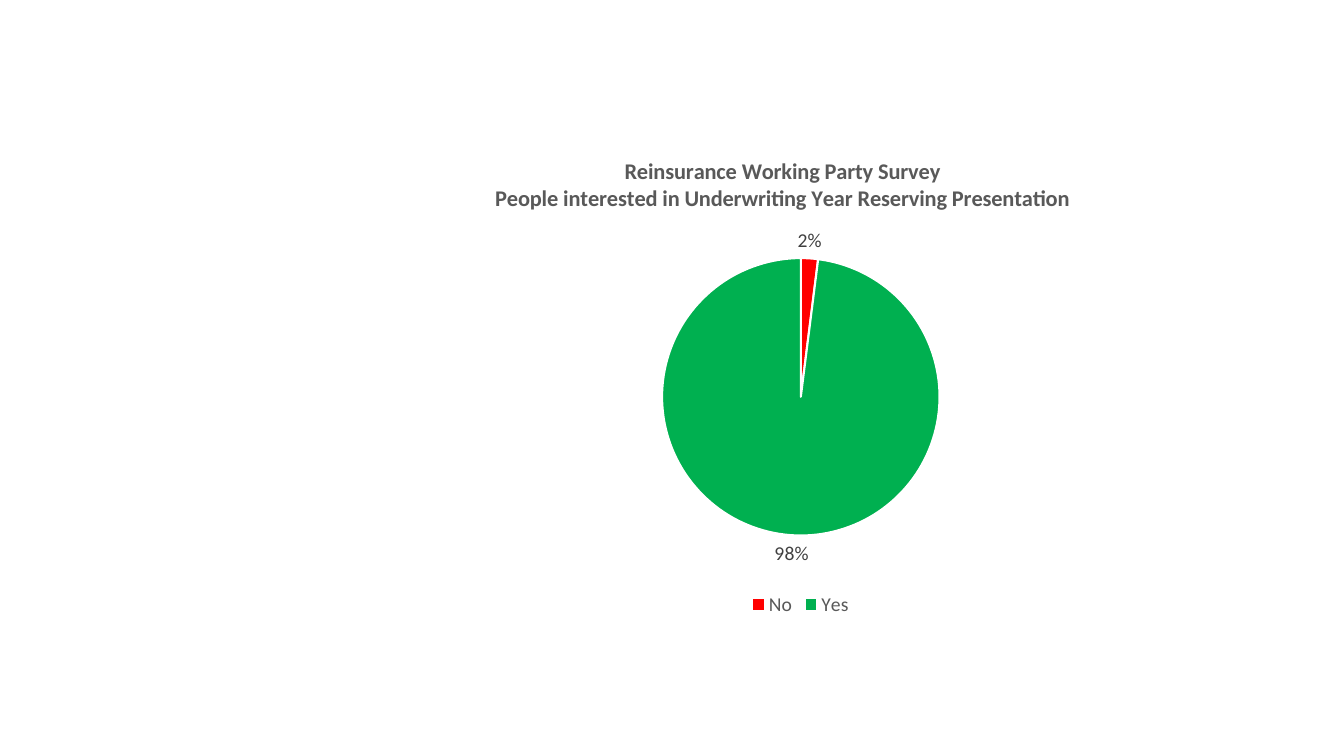
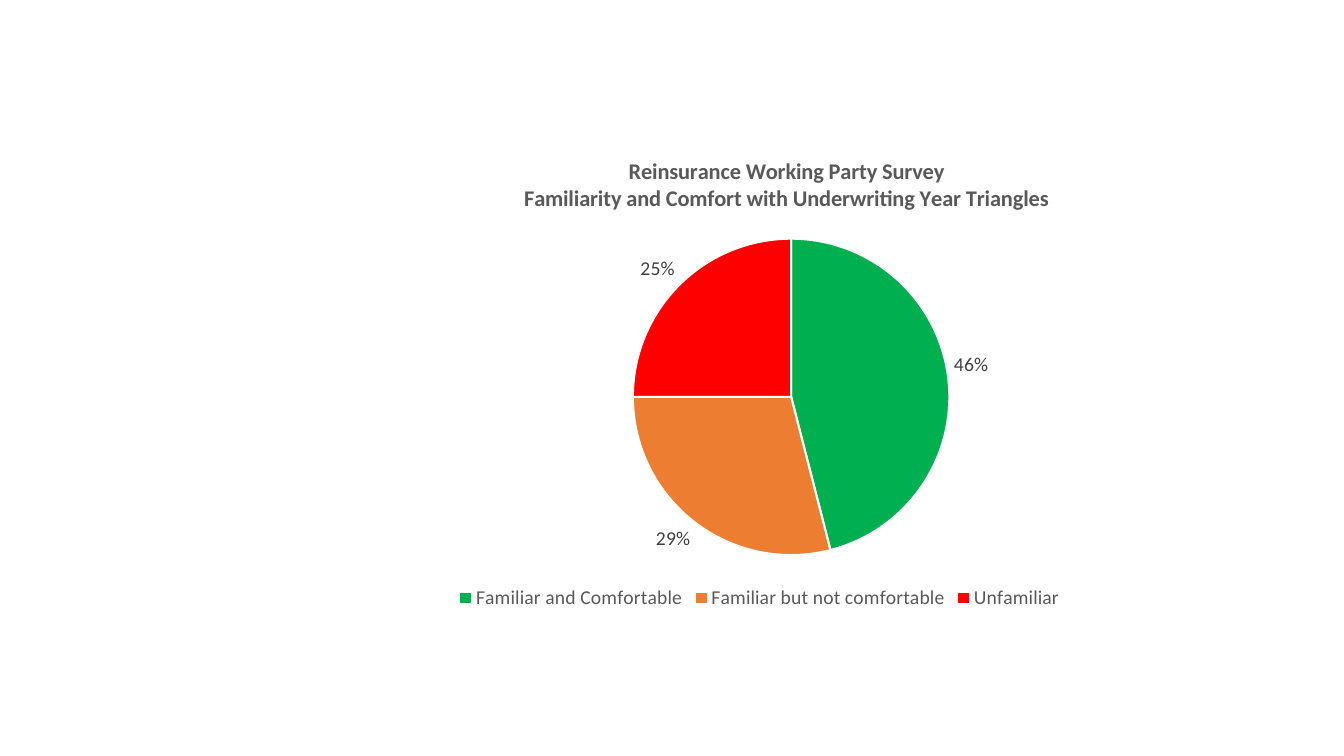
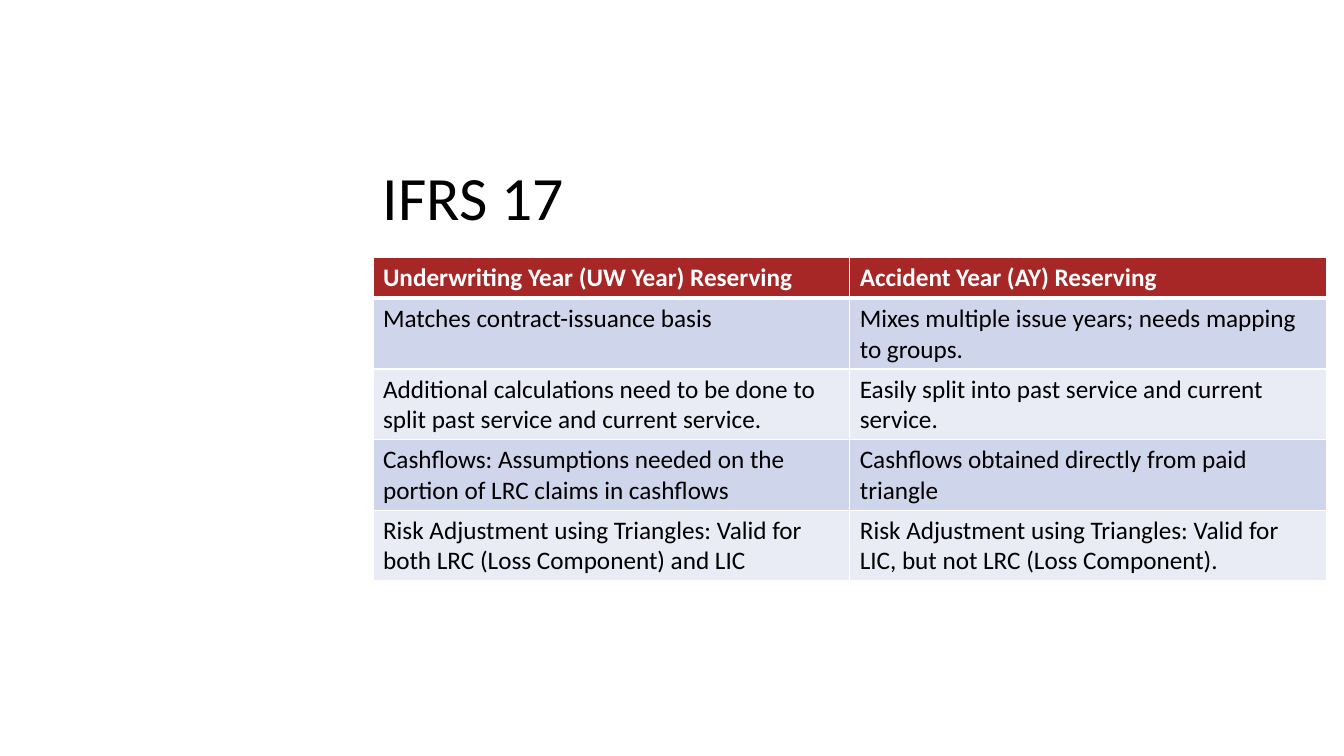
from dataclasses import dataclass

from lxml import etree
from pptx import Presentation
from pptx.chart.data import CategoryChartData
from pptx.dml.color import RGBColor
from pptx.enum.chart import XL_CHART_TYPE, XL_LABEL_POSITION, XL_LEGEND_POSITION
from pptx.enum.text import MSO_ANCHOR, PP_ALIGN
from pptx.oxml.ns import qn
from pptx.util import Inches, Pt

PIE = XL_CHART_TYPE.PIE
OUTSIDE = XL_LABEL_POSITION.OUTSIDE_END
BOTTOM = XL_LEGEND_POSITION.BOTTOM
MIDDLE = MSO_ANCHOR.MIDDLE
CENTER = PP_ALIGN.CENTER


@dataclass(frozen=True)
class Theme:
    font: str = "Calibri"
    text: str = "000000"
    white: str = "FFFFFF"
    chart_text: str = "595959"
    label: str = "404040"
    green: str = "00B050"
    orange: str = "ED7D31"
    red: str = "FF0000"
    header: str = "A72727"
    bands: tuple = ("CFD5EA", "E9EBF5")
    title_size: int = 44
    table_size: int = 18
    chart_title_size: int = 16
    chart_size: int = 14


THEME = Theme()


class SurveyDeck:
    """Builds slides on a grid of 40 columns and 30 rows in one theme."""

    COLUMNS, ROWS = 40, 30
    CHART_AREA = (9.48, 5.32, 28.71, 19.32)

    def __init__(self, theme):
        self.theme = theme
        self.deck = Presentation()
        self.deck.slide_width = Inches(13.33)
        self.deck.slide_height = Inches(7.5)
        self.page = None

    def add_page(self):
        self.page = self.deck.slides.add_slide(self.deck.slide_layouts[6])

    def place(self, left, top, width, height):
        column = self.deck.slide_width / self.COLUMNS
        row = self.deck.slide_height / self.ROWS
        return [round(n * unit) for n, unit in
                zip((left, top, width, height), (column, row, column, row))]

    def style(self, font, size, color, bold=False):
        font.name = self.theme.font
        font.size = Pt(size)
        font.bold = bold
        font.color.rgb = RGBColor.from_string(color)

    def add_span(self, para, text, size, color, bold=False):
        span = para.add_run()
        span.text = text
        self.style(span.font, size, color, bold)

    def title(self, text, area):
        box = self.page.shapes.add_textbox(*self.place(*area))
        frame = box.text_frame
        frame.word_wrap = True
        frame.vertical_anchor = MIDDLE
        para = frame.paragraphs[0]
        para.line_spacing = 0.9
        self.add_span(para, text, self.theme.title_size, self.theme.text)

    def arrange(self, part, **shares):
        layout = part.find(qn("c:layout"))
        if layout is None:
            layout = etree.Element(qn("c:layout"))
            overlay = part.find(qn("c:overlay"))
            if overlay is None:
                part.insert(0, layout)
            else:
                overlay.addprevious(layout)
        manual = etree.SubElement(layout, qn("c:manualLayout"))
        settings = {"xMode": "edge", "yMode": "edge", **shares}
        if "w" in shares:
            settings = {"layoutTarget": "inner", **settings}
        for name, value in settings.items():
            etree.SubElement(manual, qn(f"c:{name}")).set("val", str(value))

    def pie(self, title_lines, slices, title_left, center, diameter, legend_at=None):
        theme = self.theme
        data = CategoryChartData(number_format="0%")
        data.categories = [name for name, _, _ in slices]
        data.add_series("Series 1", [value for _, value, _ in slices])
        area = self.place(*self.CHART_AREA)
        chart = self.page.shapes.add_chart(PIE, *area, data).chart
        self.style(chart.font, theme.chart_size, theme.text)

        chart.has_title = True
        frame = chart.chart_title.text_frame
        for index, line in enumerate(title_lines):
            para = frame.add_paragraph() if index else frame.paragraphs[0]
            para.alignment = CENTER
            self.add_span(para, line, theme.chart_title_size, theme.chart_text, True)
        self.arrange(chart.chart_title._element, x=title_left, y=0.04)

        chart.has_legend = True
        legend = chart.legend
        legend.position = BOTTOM
        legend.include_in_layout = False
        self.style(legend.font, theme.chart_size, theme.chart_text)
        if legend_at:
            self.arrange(legend._element, x=legend_at[0], y=legend_at[1])

        plot = chart.plots[0]
        plot.vary_by_categories = True
        for index, (_, _, color) in enumerate(slices):
            wedge = plot.series[0].points[index].format
            wedge.fill.solid()
            wedge.fill.fore_color.rgb = RGBColor.from_string(color)
            wedge.line.width = Pt(1.5)
            wedge.line.color.rgb = RGBColor.from_string(theme.white)
        labels = plot.series[0].data_labels
        labels.show_value = True
        labels.position = OUTSIDE
        labels.number_format = "0%"
        labels.number_format_is_linked = False
        self.style(labels.font, theme.chart_size, theme.label)

        breadth = diameter * area[3] / area[2]
        self.arrange(chart._chartSpace.chart.plotArea,
                     x=center[0] - breadth / 2, y=center[1] - diameter / 2,
                     w=breadth, h=diameter)

    def borders(self, cell, bottom):
        properties = cell._tc.get_or_add_tcPr()
        for side, width in (("L", 1), ("R", 1), ("T", 1), ("B", bottom)):
            line = etree.SubElement(properties, qn(f"a:ln{side}"), w=str(int(Pt(width))))
            fill = etree.SubElement(line, qn("a:solidFill"))
            etree.SubElement(fill, qn("a:srgbClr"), val=self.theme.white)

    def table(self, rows, left, top, width, row_height):
        theme = self.theme
        area = self.place(left, top, width, row_height * len(rows))
        table = self.page.shapes.add_table(len(rows), len(rows[0]), *area).table
        for r, texts in enumerate(rows):
            head = r == 0
            for c, text in enumerate(texts):
                cell = table.cell(r, c)
                self.borders(cell, 3 if head else 1)
                cell.fill.solid()
                cell.fill.fore_color.rgb = RGBColor.from_string(
                    theme.header if head else theme.bands[(r - 1) % 2])
                self.add_span(cell.text_frame.paragraphs[0], text, theme.table_size,
                              theme.white if head else theme.text, head)


def main():
    survey = SurveyDeck(THEME)
    heading = "Reinsurance Working Party Survey"

    survey.add_page()
    survey.pie(
        [heading, "People interested in Underwriting Year Reserving Presentation"],
        [("No", 0.02, THEME.red), ("Yes", 0.98, THEME.green)],
        title_left=0.18, center=(0.5, 0.54), diameter=0.57)

    survey.add_page()
    survey.pie(
        [heading, "Familiarity and Comfort with Underwriting Year Triangles"],
        [("Familiar and Comfortable", 0.46, THEME.green),
         ("Familiar but not comfortable", 0.29, THEME.orange),
         ("Unfamiliar", 0.25, THEME.red)],
        title_left=0.21, center=(0.49, 0.54), diameter=0.65, legend_at=(0.14, 0.92))

    survey.add_page()
    survey.title("IFRS 17", (11.1, 5.04, 26.13, 5.8))
    survey.table([
        ("Underwriting Year (UW Year) Reserving", "Accident Year (AY) Reserving"),
        ("Matches contract-issuance basis",
         "Mixes multiple issue years; needs mapping to groups."),
        ("Additional calculations need to be done to split past service and current service.",
         "Easily split into past service and current service."),
        ("Cashflows: Assumptions needed on the portion of LRC claims in cashflows",
         "Cashflows obtained directly from paid triangle"),
        ("Risk Adjustment using Triangles: Valid for both LRC (Loss Component) and LIC",
         "Risk Adjustment using Triangles: Valid for LIC, but not LRC (Loss Component)."),
    ], left=11.1, top=10.2, width=28.38, row_height=1.64)

    survey.deck.save("out.pptx")


if __name__ == "__main__":
    main()
